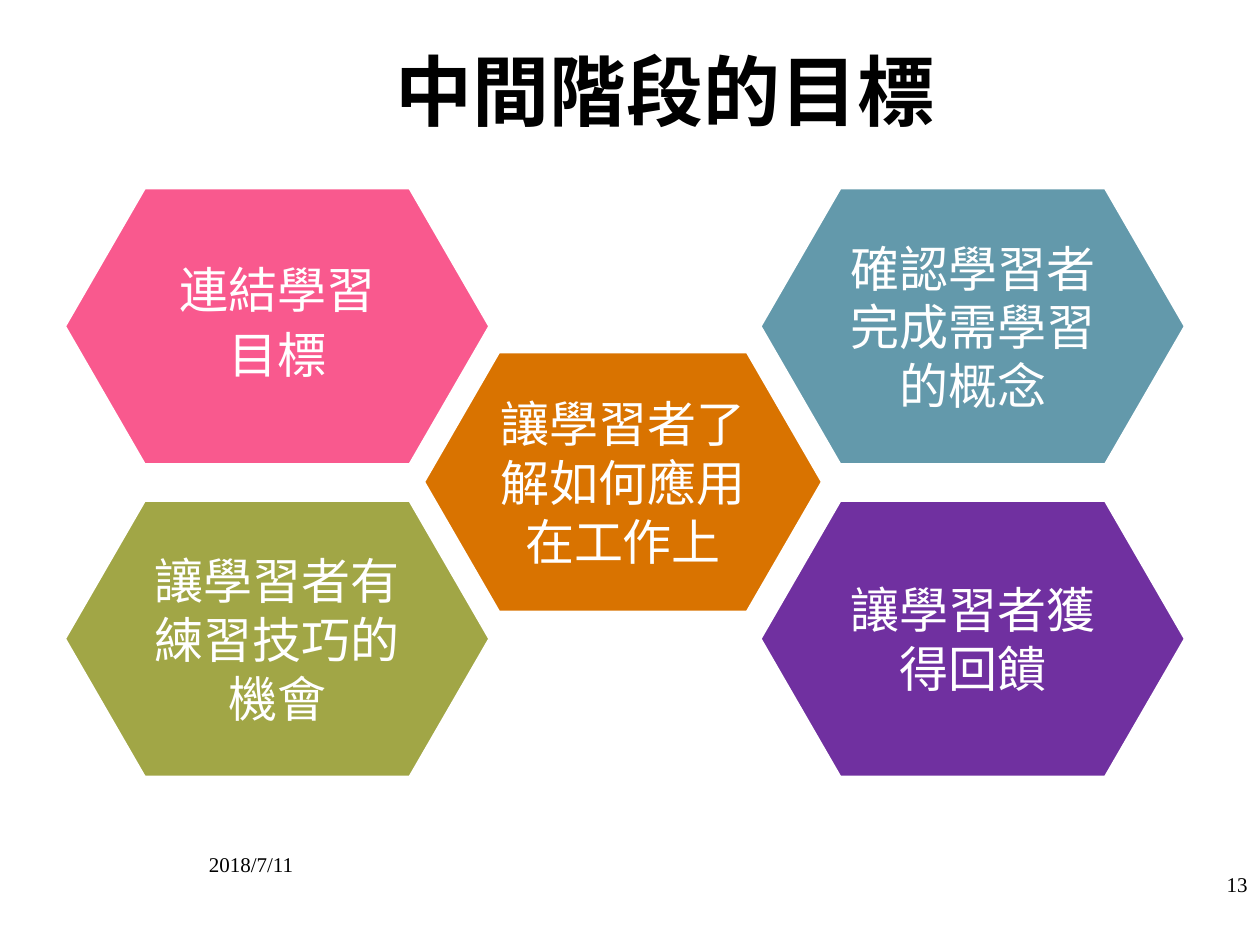
from pptx import Presentation
from pptx.dml.color import RGBColor
from pptx.enum.shapes import MSO_SHAPE
from pptx.enum.text import MSO_ANCHOR, PP_ALIGN
from pptx.util import Inches, Pt


def tint(code):
    return RGBColor.from_string(code)


class Deck:
    serif = "Times New Roman"
    sans = "Noto Sans CJK SC"
    ink = "000000"
    white = "FFFFFF"

    def __init__(self, show):
        self.slide = show.slides.add_slide(show.slide_layouts[6])

    def letter(self, frame, lines, size, font, color, align, bold=False):
        frame.word_wrap = True
        frame.vertical_anchor = MSO_ANCHOR.MIDDLE
        for i, line in enumerate(lines):
            para = frame.add_paragraph() if i else frame.paragraphs[0]
            para.text = line
            para.alignment = align
            para.font.size = Pt(size)
            para.font.name = font
            para.font.bold = bold
            para.font.color.rgb = tint(color)
            if len(lines) > 1:
                para.line_spacing = 0.85
            if i:
                para.space_before = Pt(0.3 * size)

    def label(self, box, text, size=12, font=serif, align=PP_ALIGN.LEFT, bold=False):
        shape = self.slide.shapes.add_textbox(*map(Inches, box))
        self.letter(shape.text_frame, [text], size, font, self.ink, align, bold)

    def hexagon(self, box, fill, lines):
        shape = self.slide.shapes.add_shape(MSO_SHAPE.HEXAGON, *map(Inches, box))
        shape.adjustments[0] = 0.289
        shape.adjustments[1] = 1.155
        shape.shadow.inherit = False
        shape.fill.solid()
        shape.fill.fore_color.rgb = tint(fill)
        shape.line.color.rgb = tint(self.white)
        shape.line.width = Pt(2)
        frame = shape.text_frame
        frame.margin_left = frame.margin_right = Inches(0.05)
        frame.margin_top = frame.margin_bottom = Inches(0.05)
        self.letter(frame, lines, 28, self.serif, self.white, PP_ALIGN.CENTER)


def main():
    show = Presentation()
    show.slide_width, show.slide_height = Inches(10), Inches(7.5)
    deck = Deck(show)
    deck.label((1.06, 0.09, 8.44, 1.25), "中間階段的目標", 44, deck.sans, PP_ALIGN.CENTER, True)
    deck.label((1.56, 6.66, 2.33, 0.4), "2018/7/11")
    deck.label((7.67, 6.82, 2.33, 0.4), "13", align=PP_ALIGN.RIGHT)

    left, right, top, low = 0.51, 6.03, 1.49, 3.97
    large, small = (3.38, 2.2), (3.17, 2.07)
    goals = [
        (left, top, large, "F9598E", ["連結學習", "目標"]),
        (3.36, 2.79, small, "D97300", ["讓學習者了解如何應用在工作上"]),
        (right, top, large, "6399AB", ["確認學習者完成需學習的概念"]),
        (left, low, large, "A1A646", ["讓學習者有練習技巧的機會"]),
        (right, low, large, "7030A0", ["讓學習者獲得回饋"]),
    ]
    for x, y, size, fill, lines in goals:
        deck.hexagon((x, y, *size), fill, lines)
    show.save("out.pptx")


if __name__ == "__main__":
    main()
